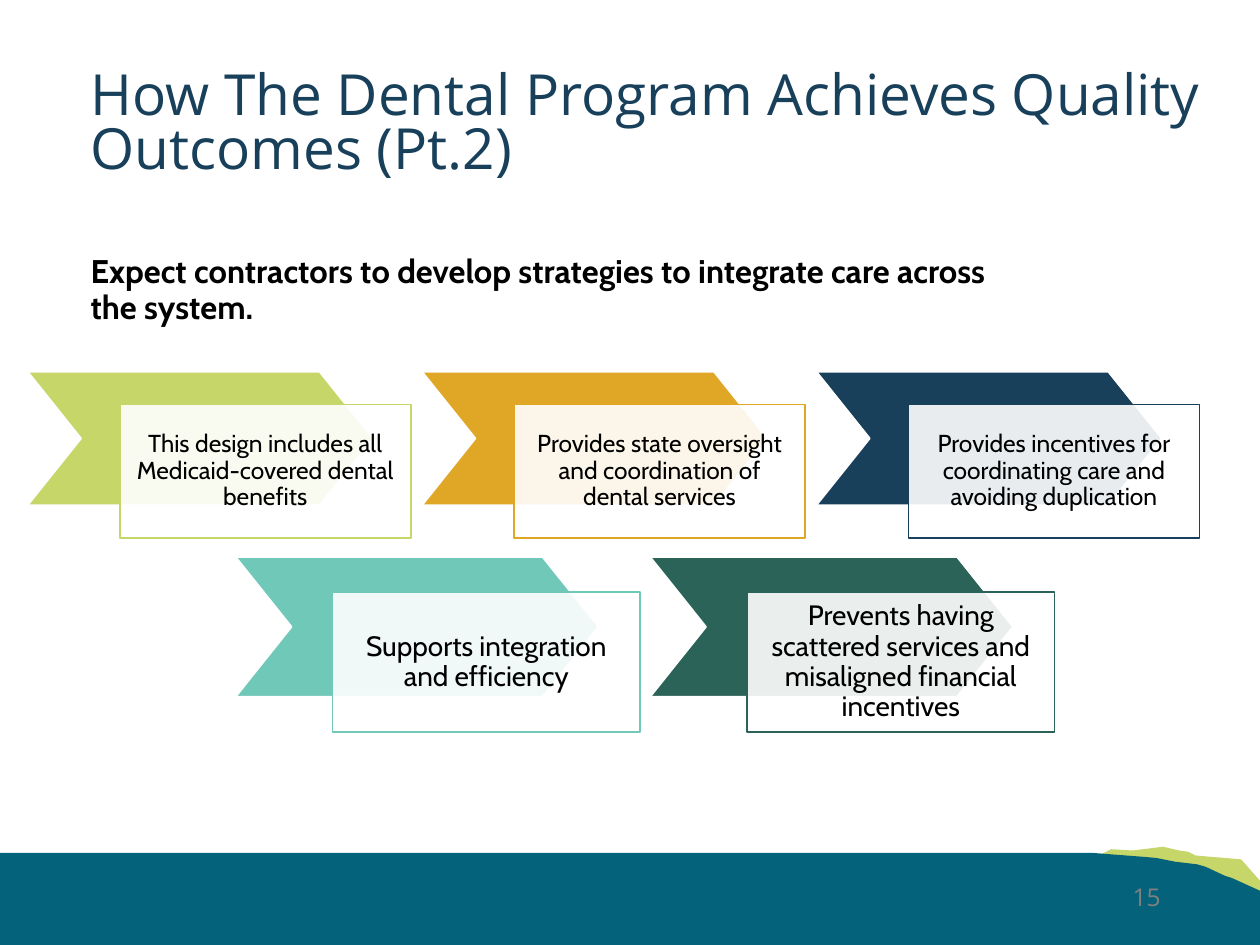
from dataclasses import dataclass

from lxml.etree import SubElement
from pptx import Presentation
from pptx.dml.color import RGBColor
from pptx.enum.shapes import MSO_SHAPE as Shape
from pptx.enum.text import MSO_ANCHOR as Anchor, PP_ALIGN as Align
from pptx.oxml.ns import qn
from pptx.util import Inches, Pt


@dataclass(frozen=True)
class Theme:
    lime: str = "C6D668"
    amber: str = "E0A626"
    navy: str = "18405B"
    mint: str = "70C8B8"
    forest: str = "2C6358"
    ocean: str = "04627A"
    white: str = "FFFFFF"
    black: str = "000000"
    grey: str = "808080"
    heading_font: str = "Open Sans"
    body_font: str = "Cabin"
    title_size: float = 32.4
    lead_size: float = 18.7
    large_size: float = 16
    small_size: float = 14


@dataclass(frozen=True)
class Row:
    """Measures shared by the chevron cards of one row, in inches."""
    left: float
    top: float
    step: float
    chevron: tuple
    card: tuple
    offset: tuple
    inset: float
    size: float
    items: tuple


THEME = Theme()

ROWS = (
    Row(0.22, 2.95, 3.13, (2.74, 1.06), (2.31, 1.06), (0.73, 0.26), 0.11, THEME.small_size, (
        ("This design includes all Medicaid-covered dental benefits", THEME.lime),
        ("Provides state oversight and coordination of dental services", THEME.amber),
        ("Provides incentives for coordinating care and avoiding duplication", THEME.navy),
    )),
    Row(1.87, 4.42, 3.29, (2.88, 1.11), (2.44, 1.11), (0.77, 0.28), 0.12, THEME.large_size, (
        ("Supports integration and efficiency", THEME.mint),
        ("Prevents having scattered services and misaligned financial incentives", THEME.forest),
    )),
)

HILL = ((8.82, 6.74), (8.62, 6.84), (10, 7.11), (10, 6.99), (9.85, 6.82), (9.49, 6.79),
        (9.43, 6.76), (9.36, 6.75), (9.23, 6.72), (8.99, 6.75))
WAVE = ((0, 6.77), (8.68, 6.77), (9.07, 6.8), (9.18, 6.81), (9.33, 6.84), (9.5, 6.86),
        (9.57, 6.88), (9.72, 6.95), (9.78, 6.97), (10, 7.07), (10, 7.5), (0, 7.5))


def rgb(code):
    return RGBColor.from_string(code)


def write(shape, text, *, font, size, color, bold=False, align=Align.LEFT,
          anchor=Anchor.TOP, spacing=1.0, inset=None):
    frame = shape.text_frame
    frame.word_wrap = True
    frame.vertical_anchor = anchor
    if inset is not None:
        frame.margin_left = frame.margin_right = Inches(inset)
        frame.margin_top = frame.margin_bottom = Inches(inset)
    para = frame.paragraphs[0]
    para.alignment = align
    para.line_spacing = spacing
    span = para.add_run()
    span.text = text
    span.font.name = font
    span.font.size = Pt(size)
    span.font.bold = bold
    span.font.color.rgb = rgb(color)


def add_text(page, text, left, top, width, height, **style):
    box = page.shapes.add_textbox(Inches(left), Inches(top), Inches(width), Inches(height))
    write(box, text, **style)


def paint(shape, fill, line=None, opacity=100):
    shape.shadow.inherit = False
    shape.fill.solid()
    shape.fill.fore_color.rgb = rgb(fill)
    if opacity < 100:
        color = shape.fill._xPr.find(qn("a:solidFill"))[0]
        SubElement(color, qn("a:alpha")).set("val", str(opacity * 1000))
    if line:
        shape.line.color.rgb = rgb(line)
        shape.line.width = Pt(1)
    else:
        shape.line.fill.background()


def add_shape(page, kind, left, top, size, **look):
    shape = page.shapes.add_shape(kind, Inches(left), Inches(top), *map(Inches, size))
    paint(shape, **look)
    return shape


def add_outline(page, points, fill):
    start, *rest = [(Inches(x), Inches(y)) for x, y in points]
    builder = page.shapes.build_freeform(*start)
    builder.add_line_segments(rest, close=True)
    paint(builder.convert_to_shape(), fill)


def add_row(page, row):
    for index, (text, color) in enumerate(row.items):
        left = row.left + index * row.step
        chevron = add_shape(page, Shape.CHEVRON, left, row.top, row.chevron,
                            fill=color, line=THEME.white)
        chevron.adjustments[0] = 0.4
        card = add_shape(page, Shape.RECTANGLE, left + row.offset[0], row.top + row.offset[1],
                         row.card, fill=THEME.white, line=color, opacity=90)
        write(card, text, font=THEME.body_font, size=row.size, color=THEME.black,
              align=Align.CENTER, anchor=Anchor.MIDDLE, spacing=0.9, inset=row.inset)


def main():
    deck = Presentation()
    deck.slide_width, deck.slide_height = Inches(10), Inches(7.5)
    page = deck.slides.add_slide(deck.slide_layouts[6])

    add_outline(page, HILL, THEME.lime)
    add_outline(page, WAVE, THEME.ocean)
    add_text(page, "How The Dental Program Achieves Quality Outcomes (Pt.2)",
             0.62, 0.42, 9.26, 1.16, font=THEME.heading_font, size=THEME.title_size,
             color=THEME.navy, anchor=Anchor.MIDDLE, spacing=0.8)
    for row in ROWS:
        add_row(page, row)
    add_text(page, "Expect contractors to develop strategies to integrate care across the system.",
             0.62, 1.97, 7.71, 0.67, font=THEME.body_font, size=THEME.lead_size,
             color=THEME.black, bold=True, anchor=Anchor.BOTTOM, spacing=0.9)
    add_text(page, "15", 7.06, 6.95, 2.25, 0.4, font=THEME.heading_font,
             size=THEME.small_size, color=THEME.grey, align=Align.RIGHT)
    deck.save("out.pptx")


if __name__ == "__main__":
    main()
